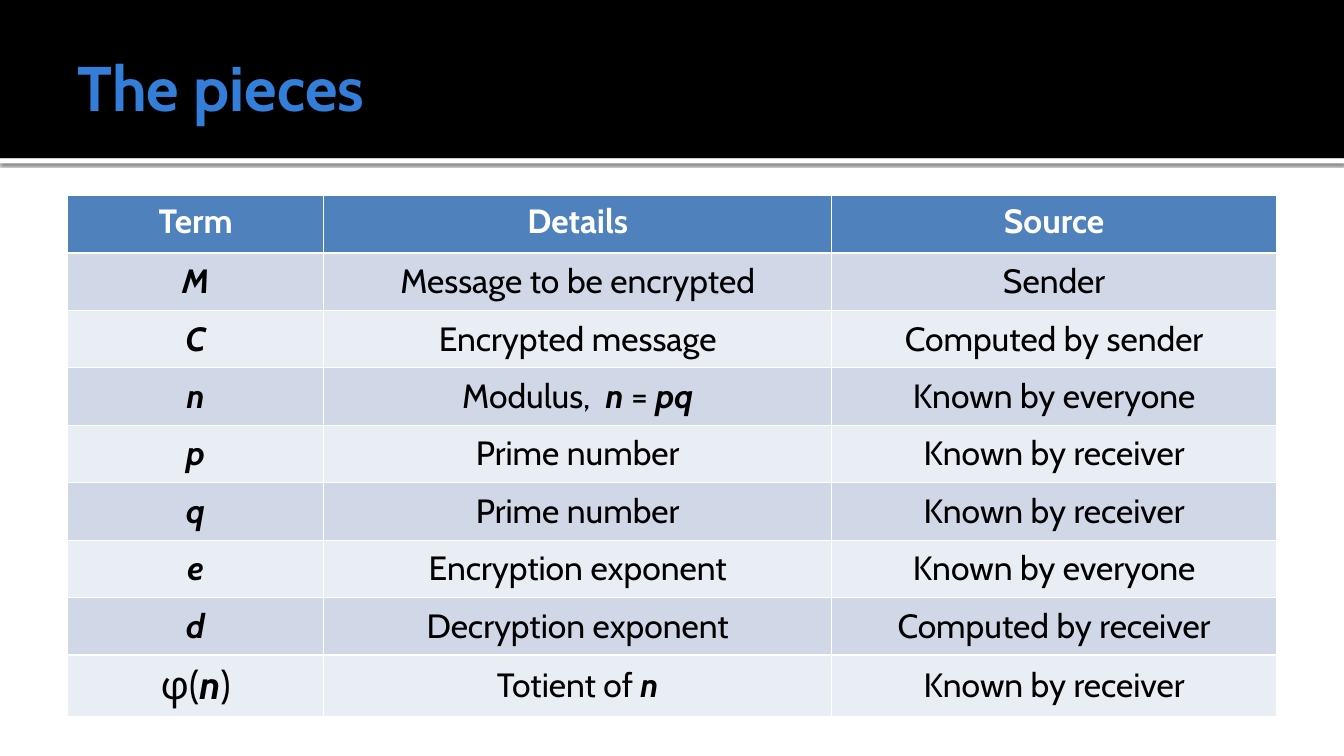
from lxml import etree
from pptx import Presentation
from pptx.dml.color import RGBColor
from pptx.enum.shapes import MSO_SHAPE
from pptx.enum.text import MSO_ANCHOR, MSO_AUTO_SIZE, PP_ALIGN
from pptx.oxml import parse_xml
from pptx.util import Inches, Pt

RECT = MSO_SHAPE.RECTANGLE
TOP, MIDDLE = MSO_ANCHOR.TOP, MSO_ANCHOR.MIDDLE
LEFT, CENTER = PP_ALIGN.LEFT, PP_ALIGN.CENTER
FONT = "Cabin"
WIDTH, HEIGHT = 13.33, 7.5
BAND_H, RULE_H = 1.57, 0.05
COLS = [2.54, 5.04, 4.41]
ROW_H, LAST_ROW_H = 0.57, 0.61
HEAD_FILL, ROW_FILLS = "4F81BD", ("D0D8E8", "E9EDF4")

# Text between asterisks is a bold italic variable.
HEADER = ("Term", "Details", "Source")
PIECES = [
    ("*M*", "Message to be encrypted", "Sender"),
    ("*C*", "Encrypted message", "Computed by sender"),
    ("*n*", "Modulus,  *n* = *pq*", "Known by everyone"),
    ("*p*", "Prime number", "Known by receiver"),
    ("*q*", "Prime number", "Known by receiver"),
    ("*e*", "Encryption exponent", "Known by everyone"),
    ("*d*", "Decryption exponent", "Computed by receiver"),
    ("φ(*n*)", "Totient of *n*", "Known by receiver"),
]
SHADOW = (
    '<a:effectLst xmlns:a="http://schemas.openxmlformats.org/drawingml/2006/main">'
    '<a:outerShdw blurRad="31750" dist="10160" dir="5400000" algn="tl" rotWithShape="0">'
    '<a:srgbClr val="000000"><a:alpha val="60000"/></a:srgbClr>'
    '</a:outerShdw></a:effectLst>'
)


def color(value):
    return RGBColor.from_string(value)


def add_run(p, text, size, fill, bold=False, italic=False):
    r = p.add_run()
    r.text = text
    values = {"name": FONT, "size": Pt(size), "bold": bold, "italic": italic}
    for name, value in values.items():
        setattr(r.font, name, value)
    r.font.color.rgb = color(fill)


def add_band(s, top, height, fill):
    band = s.shapes.add_shape(RECT, 0, Inches(top), Inches(WIDTH), Inches(height))
    band.shadow.inherit = False
    band.fill.solid()
    band.fill.fore_color.rgb = color(fill)
    band.line.fill.background()
    return band


def add_heading(s, text, left, top, width, height):
    """Draw the black band with its shadowed rule and put the title on it."""
    rule = add_band(s, BAND_H, RULE_H, "FFFFFF")
    sp_pr = rule.fill._xPr
    sp_pr.replace(sp_pr.find("{*}effectLst"), parse_xml(SHADOW))
    add_band(s, 0, BAND_H, "000000")

    title = s.shapes.title
    s.shapes._spTree.append(title._element)
    box = {"left": left, "top": top, "width": width, "height": height}
    for name, value in box.items():
        setattr(title, name, Inches(value))
    tf = title.text_frame
    layout = {"word_wrap": True, "auto_size": MSO_AUTO_SIZE.NONE,
              "vertical_anchor": MIDDLE, "margin_left": Inches(0.1),
              "margin_right": Inches(0.05), "margin_top": Inches(0.05),
              "margin_bottom": Inches(0.05)}
    for name, value in layout.items():
        setattr(tf, name, value)
    p = tf.paragraphs[0]
    p.alignment = LEFT
    add_run(p, text, 45, "337ED9", bold=True)


def fill_cell(cell, text, fill, is_header):
    cell.fill.solid()
    cell.fill.fore_color.rgb = color(fill)
    layout = {"vertical_anchor": TOP if is_header else MIDDLE,
              "margin_left": Inches(0.11), "margin_right": Inches(0.11),
              "margin_top": Inches(0.05), "margin_bottom": Inches(0.05)}
    for name, value in layout.items():
        setattr(cell, name, value)
    p = cell.text_frame.paragraphs[0]
    p.alignment = CENTER
    size = 28 if text.startswith("φ") else 24
    for i, part in enumerate(text.split("*")):
        variable = i % 2 == 1
        if part:
            add_run(p, part, size, "FFFFFF" if is_header else "000000",
                    bold=is_header or variable, italic=variable)


def add_pieces_table(s, left, top):
    rows = [HEADER] + PIECES
    heights = [ROW_H] * len(PIECES) + [LAST_ROW_H]
    table = s.shapes.add_table(len(rows), len(COLS), Inches(left), Inches(top),
                               Inches(sum(COLS)), Inches(sum(heights))).table
    for column, width in zip(table.columns, COLS):
        column.width = Inches(width)
    for i, (texts, height) in enumerate(zip(rows, heights)):
        table.rows[i].height = Inches(height)
        fill = ROW_FILLS[(i - 1) % 2] if i else HEAD_FILL
        for j, text in enumerate(texts):
            fill_cell(table.cell(i, j), text, fill, is_header=i == 0)


def main():
    prs = Presentation()
    prs.slide_width, prs.slide_height = Inches(WIDTH), Inches(HEIGHT)
    s = prs.slides.add_slide(prs.slide_layouts[5])
    add_heading(s, "The pieces", 0.67, 0.17, 12, 1.37)
    add_pieces_table(s, 0.67, 1.94)
    prs.save("out.pptx")


if __name__ == "__main__":
    main()
